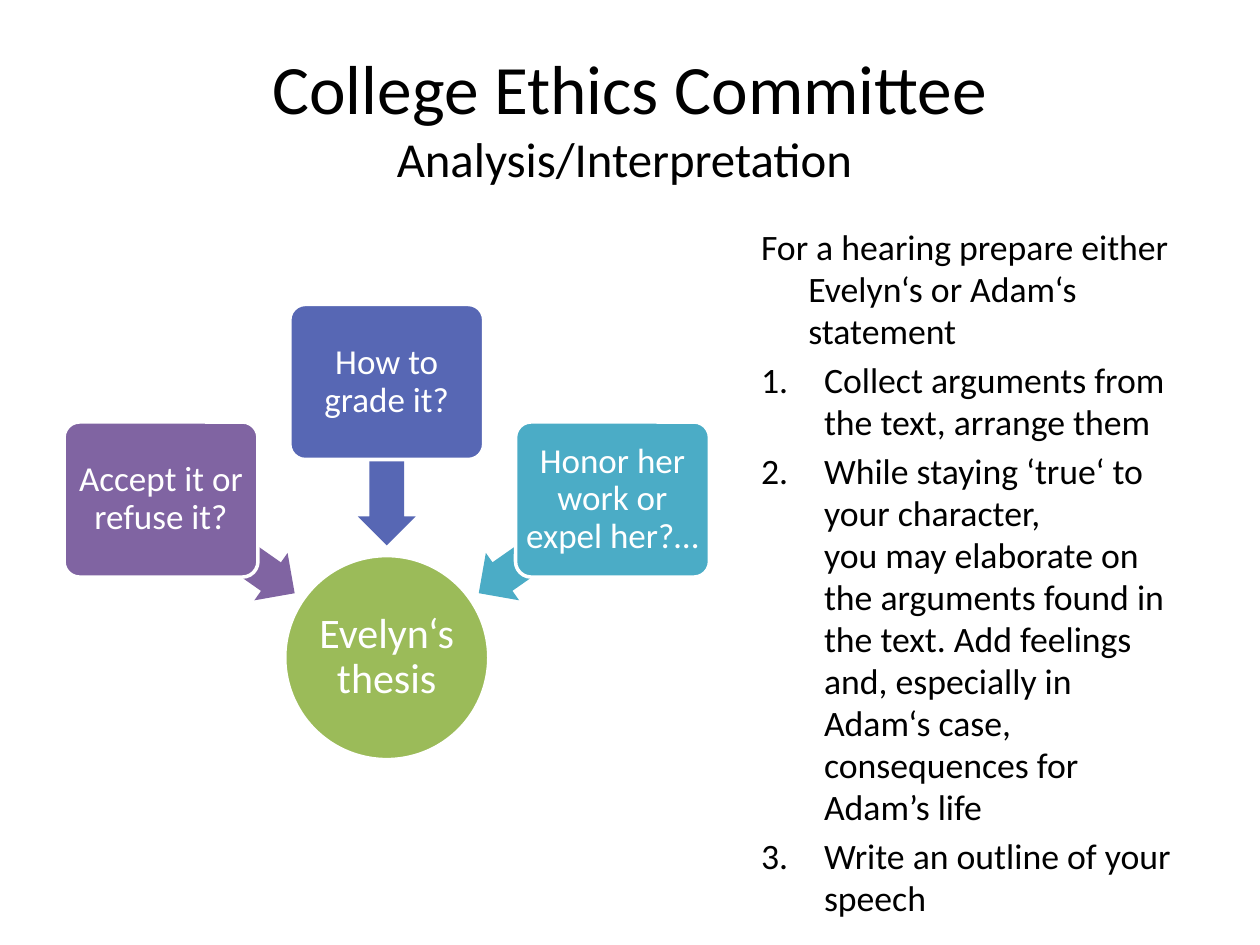
from math import cos, radians, sin
from lxml import etree
from pptx import Presentation
from pptx.dml.color import RGBColor
from pptx.enum.shapes import MSO_SHAPE
from pptx.enum.text import MSO_ANCHOR, MSO_AUTO_SIZE, PP_ALIGN
from pptx.oxml.ns import qn
from pptx.util import Pt

OVAL, BOX, ARROW = MSO_SHAPE.OVAL, MSO_SHAPE.ROUNDED_RECTANGLE, MSO_SHAPE.LEFT_ARROW
MIDDLE, TOP = MSO_ANCHOR.MIDDLE, MSO_ANCHOR.TOP
CENTER, LEFT = PP_ALIGN.CENTER, PP_ALIGN.LEFT
FIXED = MSO_AUTO_SIZE.NONE

theme = {
    "font": "Calibri",
    "ink": "000000", "white": "FFFFFF",
    "green": "9BBB59", "purple": "8064A2", "blue": "5767B4", "teal": "4BACC6",
    "title": 39.6, "sub": 27.9, "body": 20.4, "hub": 24, "label": 20,
}


def write(para, text, size, color):
    run = para.add_run()
    run.text = text
    run.font.name = theme["font"]
    run.font.size = Pt(theme[size])
    run.font.color.rgb = RGBColor.from_string(theme[color])


def draw(kind, x, y, width, height, color, text="", size="label", inset=0):
    shape = slide.shapes.add_shape(
        kind, Pt(x - width / 2), Pt(y - height / 2), Pt(width), Pt(height))
    shape.shadow.inherit = False
    shape.fill.solid()
    shape.fill.fore_color.rgb = RGBColor.from_string(theme[color])
    if not text:
        shape.line.fill.background()
        return shape
    shape.line.color.rgb = RGBColor.from_string(theme["white"])
    shape.line.width = Pt(2)
    frame = shape.text_frame
    frame.word_wrap = True
    frame.vertical_anchor = MIDDLE
    frame.margin_left = frame.margin_right = Pt(inset)
    frame.margin_top = frame.margin_bottom = Pt(inset)
    para = frame.paragraphs[0]
    para.alignment = CENTER
    para.line_spacing = 0.9
    write(para, text, size, "white")
    return shape


deck = Presentation()
deck.slide_width, deck.slide_height = Pt(720), Pt(540)
slide = deck.slides.add_slide(deck.slide_layouts[1])

title = slide.shapes.title
title.left, title.top, title.width, title.height = Pt(36), Pt(21.6), Pt(648), Pt(90)
frame = title.text_frame
frame.auto_size = FIXED
frame.vertical_anchor = MIDDLE
para = frame.paragraphs[0]
para.alignment = CENTER
write(para, "College Ethics Committee", "title", "ink")
para.add_line_break()
write(para, "Analysis/Interpretation ", "sub", "ink")

hub_x, hub_y = 221, 375.8
draw(OVAL, hub_x, hub_y, 116.6, 116.6, "green", "Evelyn‘s thesis", "hub", 1.4)

topics = [
    (215, "purple", "Accept it or refuse it?"),
    (270, "blue", "How to grade it?"),
    (325, "teal", "Honor her work or expel her?…"),
]
for angle, color, text in topics:
    dx, dy = cos(radians(angle)), sin(radians(angle))
    arrow = draw(ARROW, hub_x + 111 * dx, hub_y + 111 * dy, 93.6, 33.1, color)
    arrow.rotation = angle
    arrow.adjustments[0], arrow.adjustments[1] = 0.6, 0.5
    box = draw(BOX, hub_x + 157.5 * dx, hub_y + 157.5 * dy, 110.8, 88.6,
               color, text, inset=2.9)
    box.adjustments[0] = 0.1

body = slide.placeholders[1]
body.left, body.top, body.width, body.height = Pt(427.7), Pt(126), Pt(256.3), Pt(356.4)
frame = body.text_frame
frame.auto_size = FIXED
frame.vertical_anchor = TOP
tasks = [
    (27, "buNone", ["For a hearing prepare either Evelyn‘s or Adam‘s statement"]),
    (36, "buAutoNum", ["Collect arguments from the text, arrange them"]),
    (36, "buAutoNum", [
        "While staying ‘true‘ to your character, ",
        "you may elaborate on the arguments found in the text. Add feelings and, "
        "especially in Adam‘s case, consequences for Adam’s life"]),
    (36, "buAutoNum", ["Write an outline of your speech"]),
]
for row, (indent, bullet, lines) in enumerate(tasks):
    para = frame.add_paragraph() if row else frame.paragraphs[0]
    para.alignment = LEFT
    para.line_spacing = 0.98
    para.space_before = Pt(4)
    props = para._p.get_or_add_pPr()
    props.set("marL", str(Pt(indent)))
    props.set("indent", str(-Pt(indent)))
    mark = etree.SubElement(props, qn("a:" + bullet))
    if bullet == "buAutoNum":
        mark.set("type", "arabicPeriod")
    for part, line in enumerate(lines):
        if part:
            para.add_line_break()
        write(para, line, "body", "ink")

deck.save("out.pptx")
